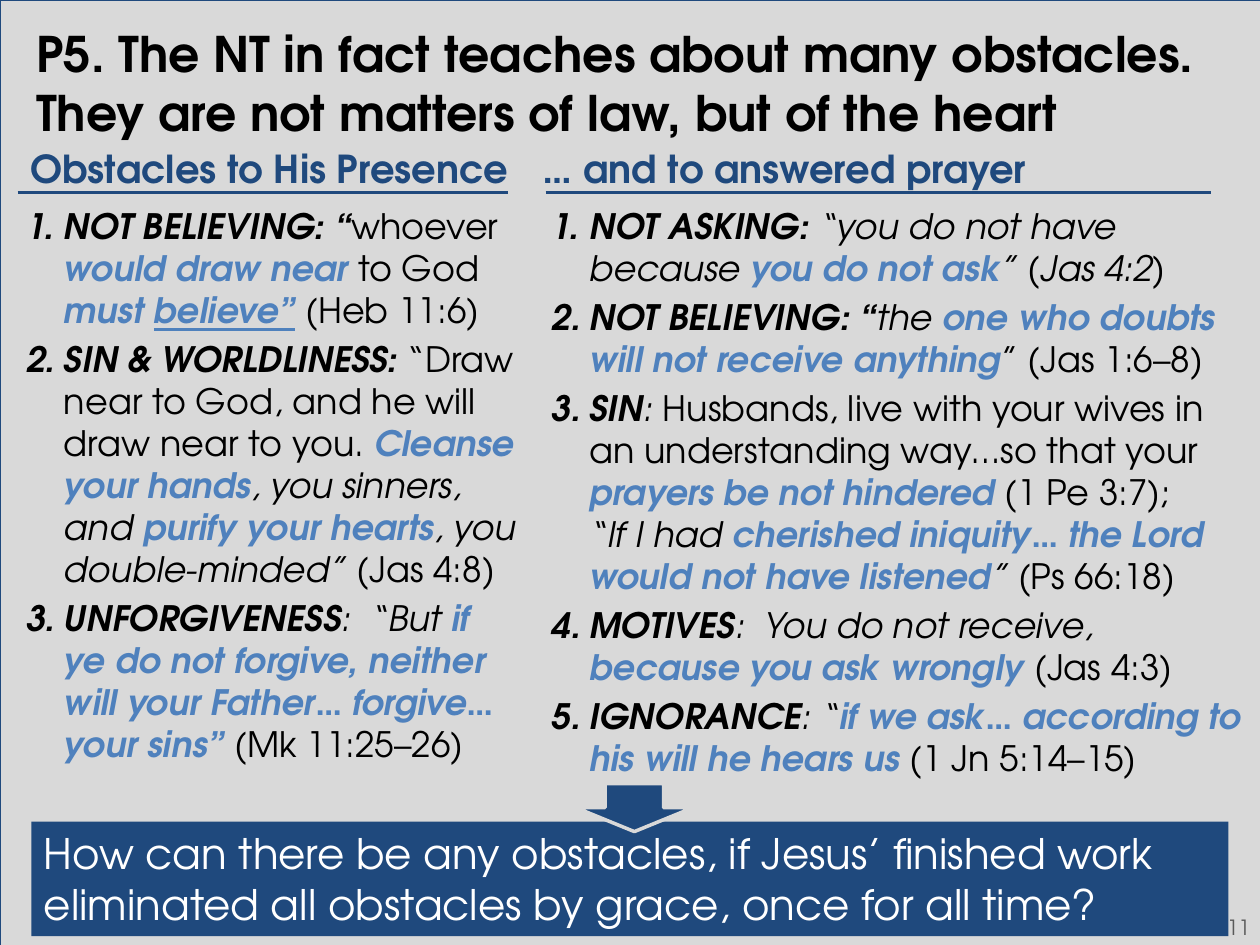
from lxml import etree
from pptx import Presentation
from pptx.dml.color import RGBColor
from pptx.enum.shapes import MSO_CONNECTOR, MSO_SHAPE
from pptx.enum.text import MSO_ANCHOR, PP_ALIGN
from pptx.oxml.ns import qn
from pptx.util import Inches, Pt

RECTANGLE, DOWN_ARROW = MSO_SHAPE.RECTANGLE, MSO_SHAPE.DOWN_ARROW
STRAIGHT = MSO_CONNECTOR.STRAIGHT
TOP, MIDDLE = MSO_ANCHOR.TOP, MSO_ANCHOR.MIDDLE
LEFT, RIGHT = PP_ALIGN.LEFT, PP_ALIGN.RIGHT

FONT = "TeX Gyre Adventor"
NAVY, BLUE, GRAY, BLACK, WHITE = "1F497D", "4F81BD", "D9D9D9", "000000", "FFFFFF"

# Run styles: bold, italic, underline, colour
STYLES = {
    "plain": (False, False, False, BLACK),
    "italic": (False, True, False, BLACK),
    "label": (True, True, False, BLACK),
    "key": (True, True, False, BLUE),
    "key line": (True, True, True, BLUE),
}

# Content
TITLE = ("P5. The NT in fact teaches about many obstacles. "
         "They are not matters of law, but of the heart")
QUESTION = ("How can there be any obstacles, if Jesus’ finished work "
            "eliminated all obstacles by grace, once for all time?")
PAGE_NUMBER = "11"

PRESENCE = [
    [("NOT BELIEVING: “", "label"), ("whoever ", "plain"),
     ("would draw near ", "key"), ("to God ", "plain"), ("must ", "key"),
     ("believe”", "key line"), (" ", "key"), ("(Heb 11:6)", "plain")],
    [("SIN & WORLDLINESS:", "label"),
     (" “Draw near to God, and he will draw near to you. ", "plain"),
     ("Cleanse your hands", "key"), (", you sinners, and ", "italic"),
     ("purify your hearts", "key"), (", you double-minded” ", "italic"),
     ("(Jas 4:8)", "plain")],
    [("UNFORGIVENESS", "label"), (":  “But ", "italic"),
     ("if ye do not forgive, neither will your Father… forgive… your sins” ", "key"),
     ("(Mk 11:25–26)", "plain")],
]
PRAYER = [
    [("NOT ASKING: ", "label"), ("“you do not have because ", "italic"),
     ("you do not ask", "key"), ("” (Jas 4:2)", "italic")],
    [("NOT BELIEVING: “", "label"), ("the ", "italic"),
     ("one who doubts will not receive anything", "key"),
     ("” (Jas 1:6–8)", "plain")],
    [("SIN", "label"), (": ", "italic"),
     ("Husbands, live with your wives in an understanding way…so that your ", "plain"),
     ("prayers be not hindered ", "key"), ("(1 Pe 3:7); \n", "plain"),
     ("“If I had ", "italic"),
     ("cherished iniquity… the Lord would not have listened", "key"),
     ("” ", "italic"), ("(Ps 66:18)", "plain")],
    [("MOTIVES", "label"), (":  You do not receive, ", "italic"),
     ("because you ask wrongly ", "key"), ("(Jas 4:3)", "plain")],
    [("IGNORANCE", "label"), (": “", "italic"),
     ("if we ask… according to his will he hears us ", "key"),
     ("(1 Jn 5:14–15)", "plain")],
]
# Heading, heading left and width, rule from and to, list left and width, items
COLUMNS = [
    ("Obstacles to His Presence", (0.14, 4.43), (0.14, 4.03), (0.01, 4.2), PRESENCE),
    ("… and to answered prayer", (4.21, 5.47), (4.33, 9.61), (4.18, 5.82), PRAYER),
]
HEADING_TOP, RULE_TOP, LIST_TOP = 1.1, 1.53, 1.57


def color(value):
    return RGBColor.from_string(value)


def add_span(para, text, size, ink, bold=False, italic=False, underline=False):
    span = para.add_run()
    span.text = text.rstrip("\n")
    font = span.font
    font.name, font.size, font.color.rgb = FONT, Pt(size), color(ink)
    font.bold, font.italic, font.underline = bold, italic, underline
    if text.endswith("\n"):
        para.add_line_break()


def write(shape, text, size, ink=BLACK, bold=False, align=LEFT, anchor=TOP):
    frame = shape.text_frame
    frame.word_wrap = True
    frame.vertical_anchor = anchor
    para = frame.paragraphs[0]
    para.alignment = align
    add_span(para, text, size, ink, bold)


def add_text(page, at, text, size, **style):
    box = page.shapes.add_textbox(*map(Inches, at))
    write(box, text, size, **style)


def add_shape(page, kind, at, fill=None, line=None, width=1):
    shape = page.shapes.add_shape(kind, *map(Inches, at))
    shape.shadow.inherit = False
    if fill:
        shape.fill.solid()
        shape.fill.fore_color.rgb = color(fill)
    else:
        shape.fill.background()
    if line:
        shape.line.color.rgb = color(line)
        shape.line.width = Pt(width)
    else:
        shape.line.fill.background()
    return shape


def add_rule(page, start, end, top):
    rule = page.shapes.add_connector(
        STRAIGHT, Inches(start), Inches(top), Inches(end), Inches(top))
    rule.line.color.rgb = color(NAVY)
    rule.line.width = Pt(1.5)
    etree.SubElement(rule._element.spPr, qn("a:effectLst"))


def add_numbered_list(page, at, items, size=20):
    frame = page.shapes.add_textbox(*map(Inches, at)).text_frame
    frame.word_wrap = True
    for index, item in enumerate(items):
        para = frame.add_paragraph() if index else frame.paragraphs[0]
        para.space_before = Pt(size * 0.2)
        properties = para._p.get_or_add_pPr()
        properties.set("marL", str(Inches(0.4)))
        properties.set("indent", str(Inches(-0.3)))
        etree.SubElement(properties, qn("a:buFont"), typeface=FONT)
        etree.SubElement(properties, qn("a:buAutoNum"), type="arabicPeriod")
        for text, style in item:
            bold, italic, underline, ink = STYLES[style]
            add_span(para, text, size, ink, bold, italic, underline)


def main():
    deck = Presentation()
    deck.slide_width, deck.slide_height = Inches(10), Inches(7.5)
    page = deck.slides.add_slide(deck.slide_layouts[6])
    page.background.fill.solid()
    page.background.fill.fore_color.rgb = color(GRAY)

    # Frame, title and page number
    add_shape(page, RECTANGLE, (0, 0, 10, 7.5), line=NAVY, width=0.25)
    add_text(page, (0.19, 0.14, 9.66, 0.55), TITLE, 28, bold=True)
    add_text(page, (7.69, 7.16, 2.33, 0.4), PAGE_NUMBER, 12,
             ink="595959", align=RIGHT, anchor=MIDDLE)

    # Two columns: heading, rule and numbered list
    for heading, (left, width), (start, end), (list_left, list_width), items in COLUMNS:
        add_numbered_list(page, (list_left, LIST_TOP, list_width, 4.14), items)
        add_text(page, (left, HEADING_TOP, width, 0.47), heading, 22, ink=NAVY, bold=True)
        add_rule(page, start, end, RULE_TOP)

    # Closing question with the arrow that leads to it
    banner = add_shape(page, RECTANGLE, (0.25, 6.52, 9.5, 0.91), fill=NAVY)
    write(banner, QUESTION, 24, ink=WHITE)
    add_shape(page, DOWN_ARROW, (4.57, 6.22, 0.93, 0.38), fill=NAVY, line=GRAY, width=2)

    deck.save("out.pptx")


if __name__ == "__main__":
    main()
